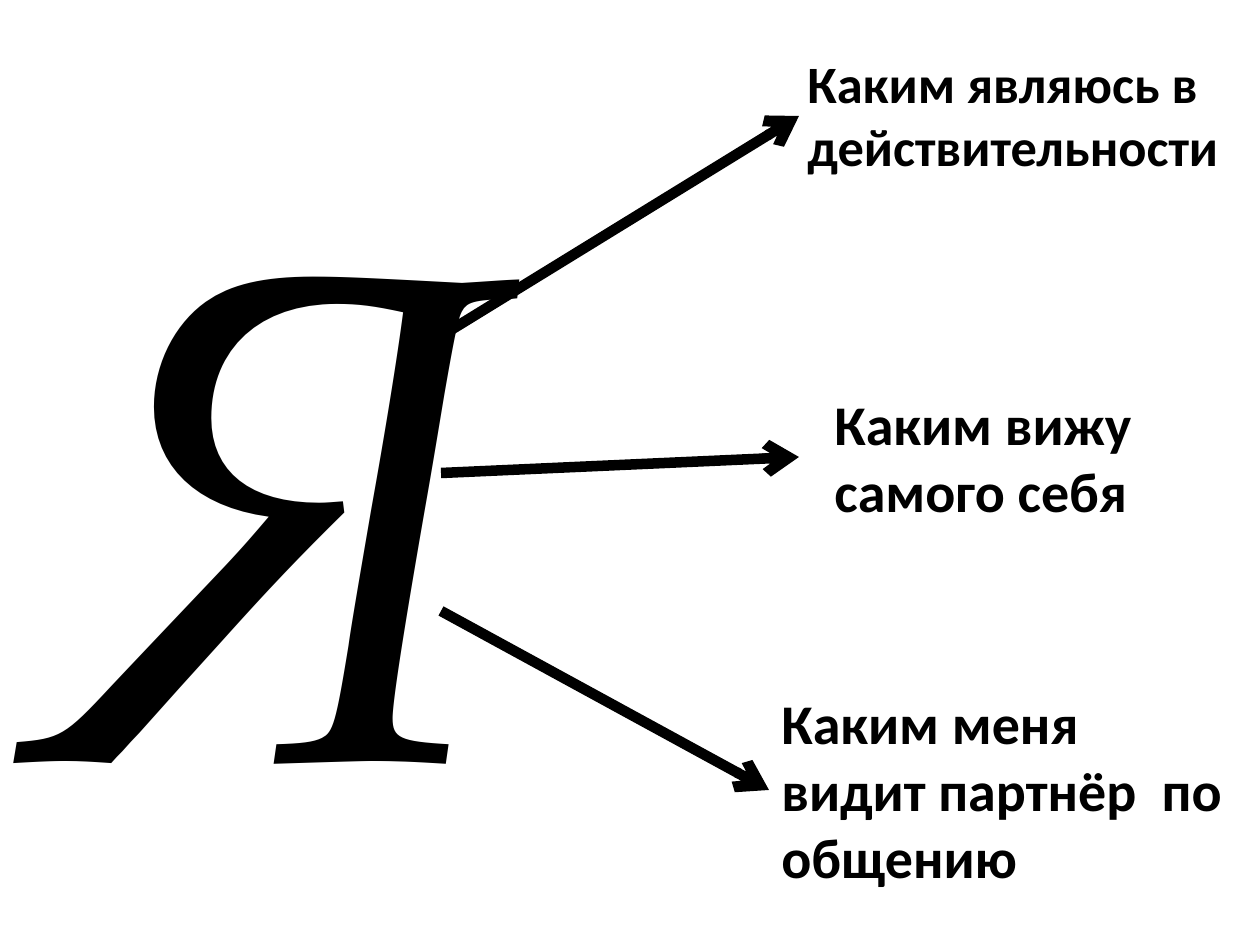
from lxml import etree
from pptx import Presentation
from pptx.dml.color import RGBColor
from pptx.enum import shapes, text
from pptx.oxml.ns import qn
from pptx.util import Pt

SCALE = 914400 / 126
COLORS = {"ink": "000000"}

LABELS = [
    ("Каким являюсь в действительности", (795, 45, 461, 140), 30),
    ("Каким вижу самого себя", (822, 383, 421, 149), 32),
    ("Каким меня видит партнёр  по общению", (769, 682, 476, 217), 32),
]
ARROWS = [
    (438, 338, 799, 116),
    (441, 473, 799, 457),
    (441, 611, 769, 790),
]


def px(*values):
    """Turn px lengths into EMU."""
    return [round(v * SCALE) for v in values]


def add_text(slide, words, box, size, face="Calibri", bold=None, italic=None):
    frame = slide.shapes.add_textbox(*px(*box)).text_frame
    frame.word_wrap = True
    frame.auto_size = text.MSO_AUTO_SIZE.SHAPE_TO_FIT_TEXT
    run = frame.paragraphs[0].add_run()
    run.text = words
    font = run.font
    font.name, font.size = face, Pt(size)
    font.bold, font.italic = bold, italic
    font.color.rgb = RGBColor.from_string(COLORS["ink"])


def add_arrow(slide, ends):
    arrow = slide.shapes.add_connector(shapes.MSO_CONNECTOR.STRAIGHT, *px(*ends))
    arrow.line.width = Pt(6)
    arrow.line.color.rgb = RGBColor.from_string(COLORS["ink"])
    etree.SubElement(arrow.line._get_or_add_ln(), qn("a:tailEnd"), type="arrow")
    etree.SubElement(arrow._element.spPr, qn("a:effectLst"))


def main():
    deck = Presentation()
    deck.slide_width, deck.slide_height = px(1260, 945)
    slide = deck.slides.add_slide(deck.slide_layouts[6])
    add_text(slide, "Я", (25, 55, 198, 861), 400, "TeX Gyre Pagella", italic=True)
    for ends in ARROWS:
        add_arrow(slide, ends)
    for words, box, size in LABELS:
        add_text(slide, words, box, size, bold=True)
    deck.save("out.pptx")


if __name__ == "__main__":
    main()
